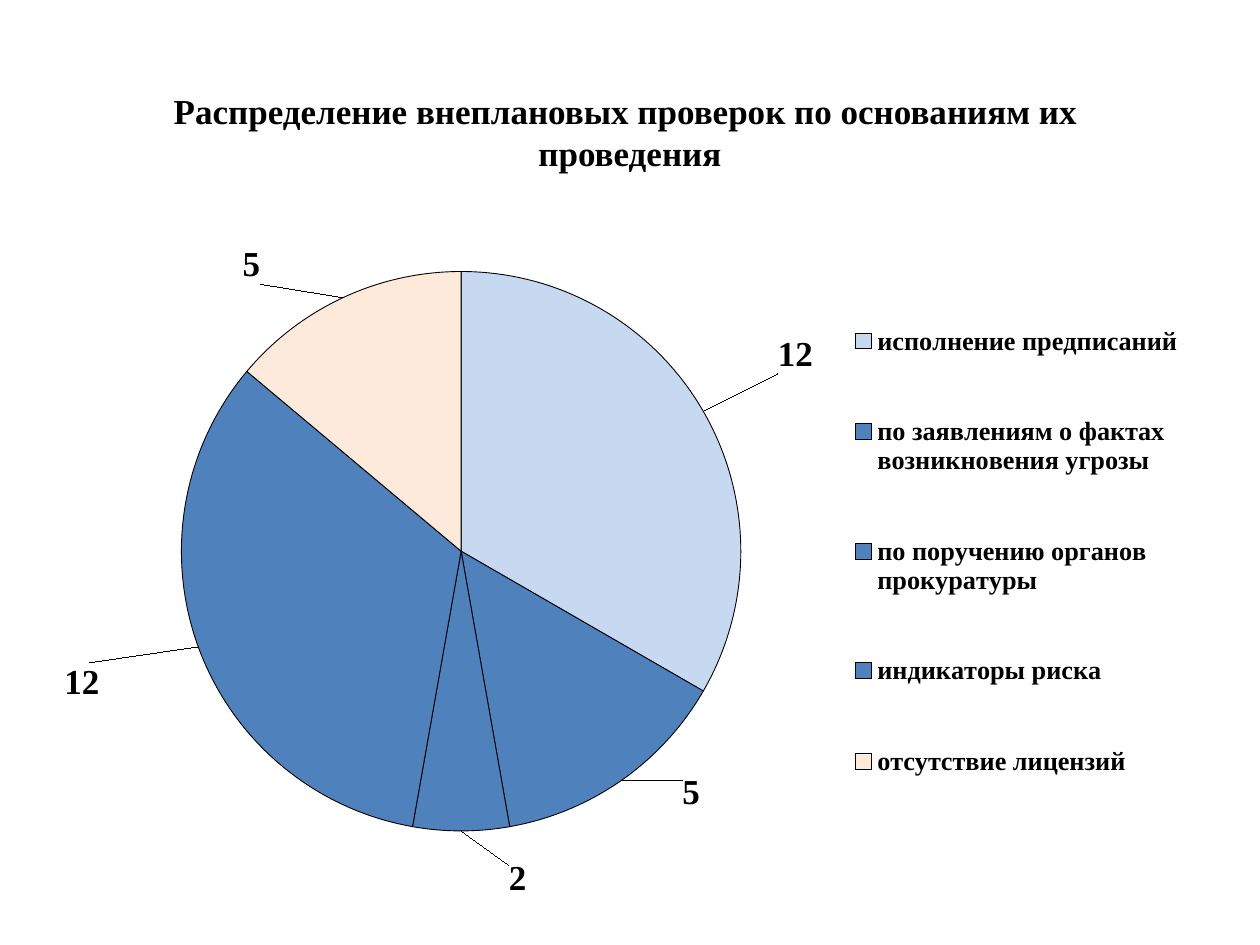
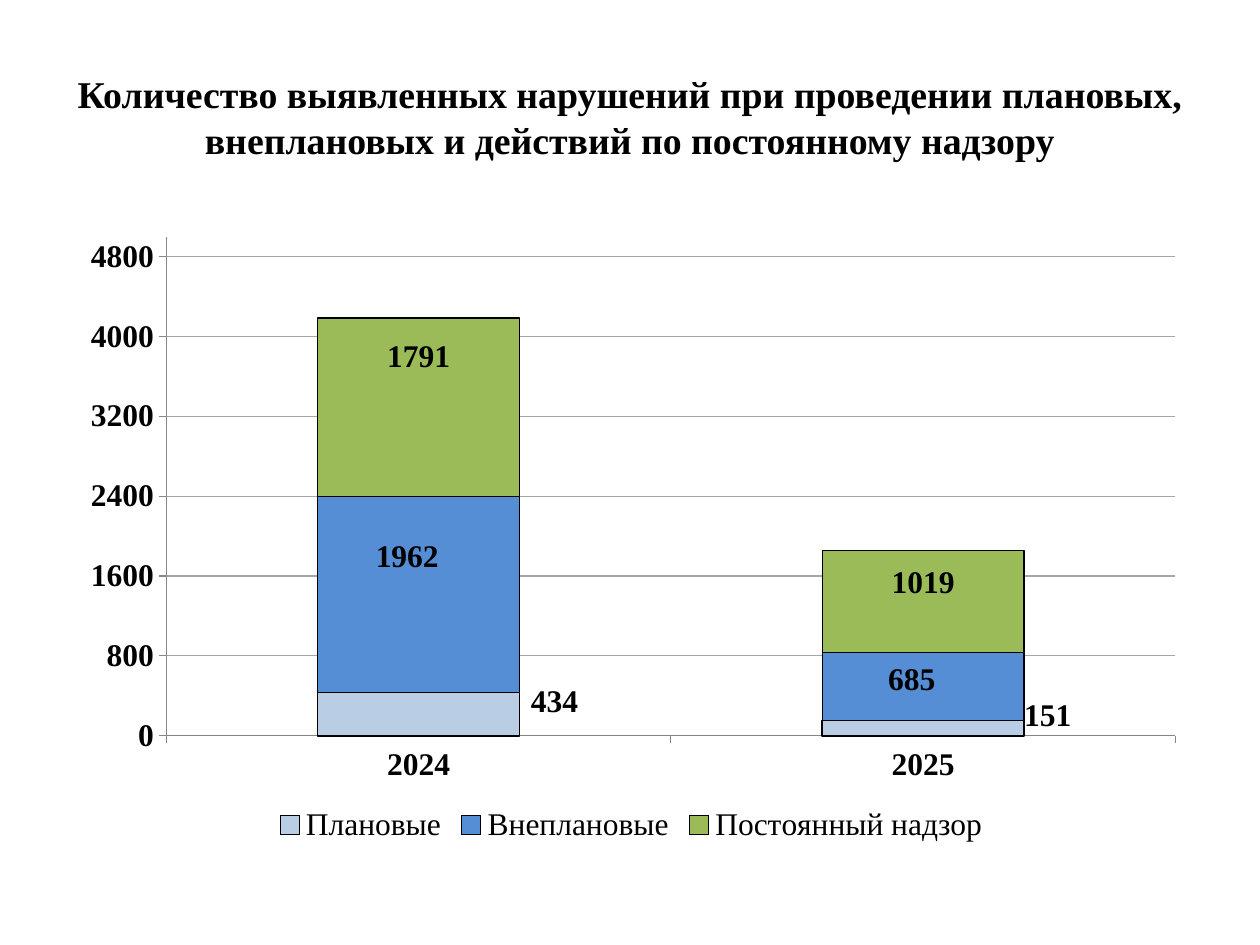
from lxml import etree
from pptx import Presentation
from pptx.chart.data import CategoryChartData
from pptx.dml.color import RGBColor
from pptx.enum.chart import XL_CHART_TYPE as ChartType
from pptx.enum.chart import XL_LABEL_POSITION as LabelPosition
from pptx.enum.chart import XL_LEGEND_POSITION as LegendPosition
from pptx.enum.chart import XL_TICK_MARK as TickMark
from pptx.enum.text import MSO_ANCHOR, MSO_AUTO_SIZE, PP_ALIGN
from pptx.oxml.ns import qn
from pptx.util import Pt

BLACK = RGBColor(0, 0, 0)
ICE_BLUE = RGBColor(0xC6, 0xD9, 0xF1)
BLUE = RGBColor(0x4F, 0x81, 0xBD)
PEACH = RGBColor(0xFD, 0xEA, 0xDA)
PALE_BLUE = RGBColor(0xB9, 0xCD, 0xE5)
MID_BLUE = RGBColor(0x55, 0x8E, 0xD5)
GREEN = RGBColor(0x9B, 0xBB, 0x59)
AXIS_GRAY = RGBColor(0x86, 0x86, 0x86)
GRID_GRAY = RGBColor(0xA6, 0xA6, 0xA6)
SERIF = "Times New Roman"
TITLE_ONLY = 5

GROUNDS = [
    ("исполнение предписаний", 12, ICE_BLUE, (0.06, -0.05)),
    ("по заявлениям о фактах возникновения угрозы", 5, BLUE, (0.05, -0.02)),
    ("по поручению органов прокуратуры", 2, BLUE, (0.05, 0.04)),
    ("индикаторы риска", 12, BLUE, (-0.09, 0.02)),
    ("отсутствие лицензий", 5, PEACH, (-0.07, -0.01)),
]
YEARS = ["2024", "2025"]
VIOLATIONS = [
    ("Плановые", (434, 151), PALE_BLUE, 1, ((0.12, -0.02), (0.11, -0.02))),
    ("Внеплановые", (1962, 685), MID_BLUE, 0.75, ((-0.01, -0.06), (-0.01, -0.01))),
    ("Постоянный надзор", (1791, 1019), GREEN, 0.75, ((0, -0.08), (0, -0.03))),
]


def style_font(font, size, bold=True):
    """Apply the shared black serif style."""
    font.name = SERIF
    font.size = Pt(size)
    font.bold = bold
    font.color.rgb = BLACK


def style_area(area_format, color, line_width):
    """Fill a chart element and outline it in black."""
    area_format.fill.solid()
    area_format.fill.fore_color.rgb = color
    area_format.line.color.rgb = BLACK
    area_format.line.width = Pt(line_width)


def set_layout(element, index, **values):
    """Give a chart element a manual layout."""
    for old_layout in element.findall(qn("c:layout")):
        element.remove(old_layout)
    layout = etree.Element(qn("c:layout"))
    manual = etree.SubElement(layout, qn("c:manualLayout"))
    for tag, value in values.items():
        etree.SubElement(manual, qn(f"c:{tag}")).set("val", str(value))
    element.insert(index, layout)


def set_box(element, index, x, y, w, h, **target):
    """Fix a chart region to fractions of the chart area."""
    set_layout(element, index, **target, xMode="edge", yMode="edge", x=x, y=y, w=w, h=h)


def label_points(series, offsets, size, position, leader_lines):
    """Show each value, shifted from its usual place."""
    labels = series.data_labels
    labels.show_value = True
    labels.position = position
    style_font(labels.font, size)
    for index in range(len(offsets)):
        label = series.points[index].data_label
        style_font(label.font, size)
        label.position = position
    element = series._element.find(qn("c:dLbls"))
    for label_element, (x, y) in zip(element.findall(qn("c:dLbl")), offsets):
        set_layout(label_element, 1, x=x, y=y)
    for leader in element.findall(qn("c:showLeaderLines")):
        leader.set("val", str(int(leader_lines)))


def add_title_slide(presentation, text, size, box):
    """Add a slide with a centred title in the given box."""
    slide = presentation.slides.add_slide(presentation.slide_layouts[TITLE_ONLY])
    title = slide.shapes.title
    title.left, title.top, title.width, title.height = map(Pt, box)
    frame = title.text_frame
    frame.text = text
    frame.word_wrap = True
    frame.auto_size = MSO_AUTO_SIZE.NONE
    frame.vertical_anchor = MSO_ANCHOR.MIDDLE
    paragraph = frame.paragraphs[0]
    paragraph.alignment = PP_ALIGN.CENTER
    for run in paragraph.runs:
        style_font(run.font, size)
    return slide


def add_base_chart(slide, chart_type, data, box, plot_box, legend_position):
    """Add a chart with a fixed plot area and a legend."""
    chart = slide.shapes.add_chart(chart_type, *map(Pt, box), data).chart
    chart.has_title = False
    chart.font.name = "Calibri"
    chart.font.size = Pt(18)
    chart.font.color.rgb = BLACK
    plot_area = chart._chartSpace.chart.plotArea
    set_box(plot_area, 0, *plot_box, layoutTarget="inner")
    chart.has_legend = True
    chart.legend.position = legend_position
    chart.legend.include_in_layout = False
    return chart


def add_grounds_pie(slide, box):
    """Draw the pie of inspections by ground."""
    names, values, colors, offsets = zip(*GROUNDS)
    data = CategoryChartData()
    data.categories = names
    data.add_series("Series 1", values)
    chart = add_base_chart(slide, ChartType.PIE, data, box,
                           (0.1, 0.07, 0.5, 0.83), LegendPosition.RIGHT)
    style_font(chart.legend.font, 15)
    set_box(chart.legend._element, 1, 0.69, 0.06, 0.3, 0.85)
    plot = chart.plots[0]
    plot.vary_by_categories = True
    series = plot.series[0]
    for index, color in enumerate(colors):
        style_area(series.points[index].format, color, 0.5)
    label_points(series, offsets, 20, LabelPosition.OUTSIDE_END, True)


def style_axis(axis):
    """Style one axis with outer ticks and bold labels."""
    axis.major_tick_mark = TickMark.OUTSIDE
    axis.minor_tick_mark = TickMark.NONE
    axis.format.line.color.rgb = AXIS_GRAY
    axis.format.line.width = Pt(0.75)
    style_font(axis.tick_labels.font, 18)


def add_violations_columns(slide, box):
    """Draw the stacked columns of violations by year."""
    data = CategoryChartData()
    data.categories = YEARS
    for name, values, *_ in VIOLATIONS:
        data.add_series(name, values)
    chart = add_base_chart(slide, ChartType.COLUMN_STACKED, data, box,
                           (0.09, 0.02, 0.89, 0.8), LegendPosition.BOTTOM)
    style_font(chart.legend.font, 18, bold=False)
    plot = chart.plots[0]
    plot.vary_by_categories = False
    plot.gap_width = 150
    plot.overlap = 100
    for series, (_, _, color, width, offsets) in zip(plot.series, VIOLATIONS):
        style_area(series.format, color, width)
        label_points(series, offsets, 18, LabelPosition.CENTER, False)
    style_axis(chart.category_axis)
    value_axis = chart.value_axis
    style_axis(value_axis)
    value_axis.minimum_scale = 0
    value_axis.maximum_scale = 5000
    value_axis.major_unit = 800
    value_axis.has_major_gridlines = True
    grid_line = value_axis.major_gridlines.format.line
    grid_line.color.rgb = GRID_GRAY
    grid_line.width = Pt(0.75)


def main():
    """Build and save both slides."""
    presentation = Presentation()
    presentation.slide_width = Pt(720)
    presentation.slide_height = Pt(540)
    grounds_slide = add_title_slide(
        presentation,
        "Распределение внеплановых проверок по основаниям их \vпроведения",
        20, (36, 21.6, 648, 106.6))
    add_grounds_pie(grounds_slide, (36.7, 128.2, 648, 385.2))
    violations_slide = add_title_slide(
        presentation,
        "Количество выявленных нарушений при проведении плановых, "
        "внеплановых и действий по постоянному надзору",
        21.6, (36, 21.6, 648, 90))
    add_violations_columns(violations_slide, (36.7, 128.2, 648, 356.4))
    presentation.save("out.pptx")


if __name__ == "__main__":
    main()
